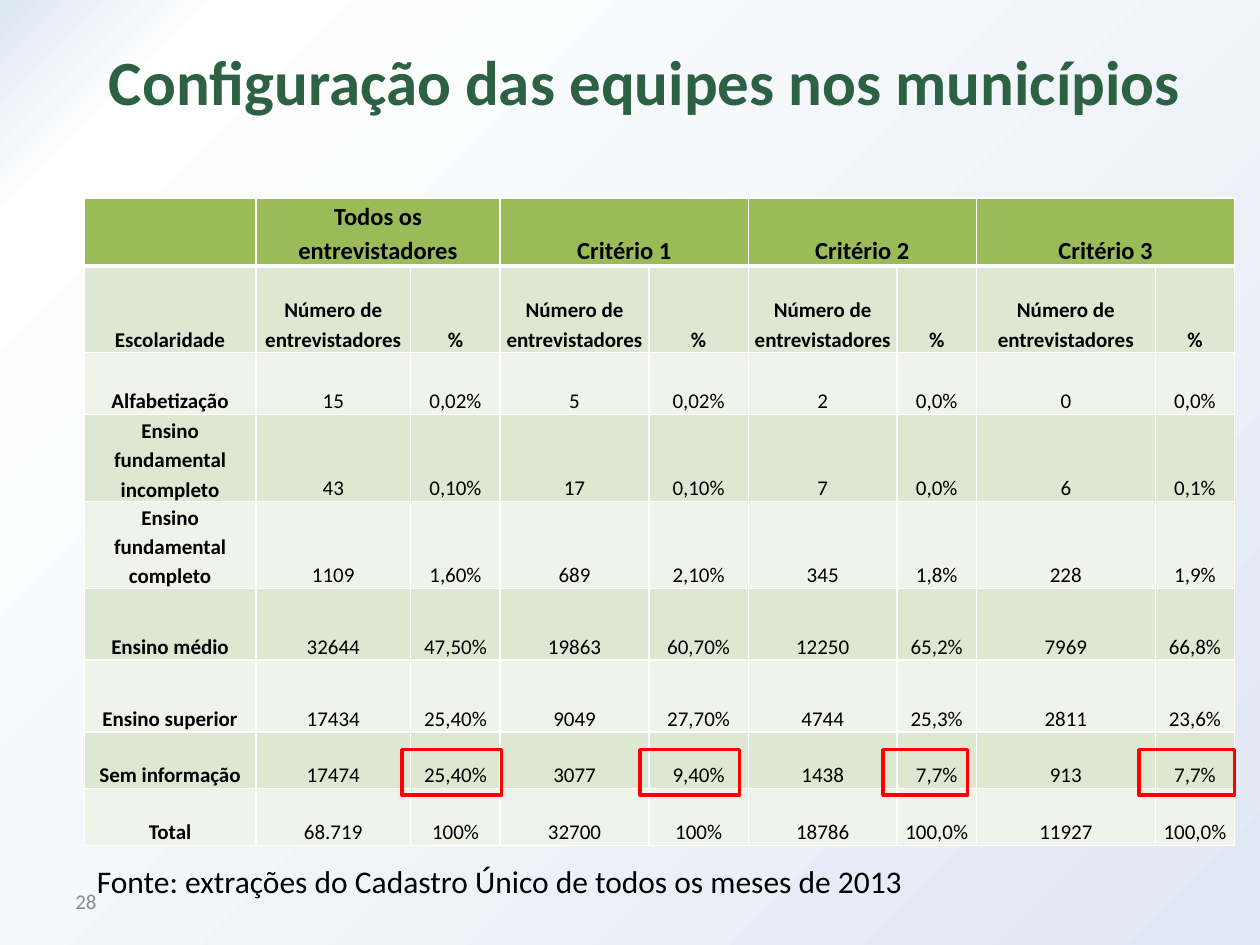
import copy

import pptx
import pptx.dml.color
import pptx.enum.shapes
import pptx.enum.text
import pptx.oxml
import pptx.oxml.ns
import pptx.util
from pptx.dml.color import RGBColor
from pptx.enum.text import MSO_ANCHOR, PP_ALIGN
from pptx.util import Inches

TITLE_GREEN = RGBColor(0x2C, 0x62, 0x43)
HEADER_GREEN = RGBColor(0x9B, 0xBB, 0x59)
BAND_DARK = RGBColor(0xDE, 0xE7, 0xD1)
BAND_LIGHT = RGBColor(0xEF, 0xF3, 0xEA)
PALE_BLUE = RGBColor(0xDC, 0xE6, 0xF2)
LAVENDER = RGBColor(0xE1, 0xE8, 0xF5)
WHITE = RGBColor(0xFF, 0xFF, 0xFF)
BLACK = RGBColor(0, 0, 0)
GRAY = RGBColor(0x8C, 0x8C, 0x8C)
RED = RGBColor(0xFF, 0, 0)

COLUMN_WIDTHS = [1.36, 1.23, 0.71, 1.18, 0.79, 1.18, 0.63, 1.42, 0.63]
ROW_HEIGHTS = [0.54, 0.69, 0.49, 0.69, 0.69, 0.57, 0.57, 0.45, 0.45]
GROUPS = ["Todos os entrevistadores", "Critério 1", "Critério 2", "Critério 3"]
HEADER = [""] + [text for group in GROUPS for text in (group, "")]
SUBHEADER = ["Escolaridade"] + ["Número de entrevistadores", "%"] * len(GROUPS)
SCHOOLING = [
    ["Alfabetização", "15", "0,02%", "5", "0,02%", "2", "0,0%", "0", "0,0%"],
    ["Ensino fundamental incompleto", "43", "0,10%", "17", "0,10%", "7", "0,0%", "6", "0,1%"],
    ["Ensino fundamental completo", "1109", "1,60%", "689", "2,10%", "345", "1,8%", "228", "1,9%"],
    ["Ensino médio", "32644", "47,50%", "19863", "60,70%", "12250", "65,2%", "7969", "66,8%"],
    ["Ensino superior", "17434", "25,40%", "9049", "27,70%", "4744", "25,3%", "2811", "23,6%"],
    ["Sem informação", "17474", "25,40%", "3077", "9,40%", "1438", "7,7%", "913", "7,7%"],
    ["Total", "68.719", "100%", "32700", "100%", "18786", "100,0%", "11927", "100,0%"],
]
HIGHLIGHTS = [(3.19, 0.79), (5.08, 0.79), (7.01, 0.67), (9.04, 0.76)]


class SlideBuilder:
    font_name = "Calibri"

    def __init__(self, slide):
        self.slide = slide

    def background(self, stops, angle):
        fill = self.slide.background.fill
        fill.gradient()
        fill.gradient_angle = angle
        stop_list = self.slide.element.find(".//" + pptx.oxml.ns.qn("a:gsLst"))
        while len(stop_list) < len(stops):
            stop_list.append(copy.deepcopy(stop_list[0]))
        for stop, (position, color) in zip(fill.gradient_stops, stops):
            stop.position = position
            stop.color.rgb = color

    def style(self, paragraph, size, color=BLACK, bold=False, align=None):
        font = paragraph.font
        font.name, font.size, font.bold = self.font_name, pptx.util.Pt(size), bold
        font.color.rgb = color
        paragraph.alignment = align

    def text(self, box, content, size, color=BLACK, bold=False, align=None,
             anchor=MSO_ANCHOR.TOP):
        frame = self.slide.shapes.add_textbox(*map(Inches, box)).text_frame
        frame.word_wrap = True
        frame.vertical_anchor = anchor
        frame.text = content
        self.style(frame.paragraphs[0], size, color, bold, align)

    def borders(self, cell, bottom_width):
        """Draw white borders, 1 pt wide except at the bottom."""
        properties = cell._tc.get_or_add_tcPr()
        for index, side in enumerate("LRTB"):
            width = pptx.util.Pt(bottom_width if side == "B" else 1)
            properties.insert(index, pptx.oxml.parse_xml(
                f'<a:ln{side} {pptx.oxml.ns.nsdecls("a")} w="{width}"><a:solidFill>'
                f'<a:srgbClr val="{WHITE}"/></a:solidFill></a:ln{side}>'))

    def cell(self, cell, content, fill, size, bold, compact, bottom_width):
        """Fill one cell; compact cells have thin margins and single spacing."""
        cell.fill.solid()
        cell.fill.fore_color.rgb = fill
        self.borders(cell, bottom_width)
        cell.vertical_anchor = MSO_ANCHOR.BOTTOM
        cell.margin_left = cell.margin_right = Inches(0.01 if compact else 0.05)
        cell.margin_top = Inches(0.01 if compact else 0)
        cell.margin_bottom = 0
        cell.text = content
        paragraph = cell.text_frame.paragraphs[0]
        self.style(paragraph, size, bold=bold, align=PP_ALIGN.CENTER)
        if not compact:
            paragraph.line_spacing = 1.15

    def table(self, box, rows):
        table = self.slide.shapes.add_table(
            len(rows), len(COLUMN_WIDTHS), *map(Inches, box)).table
        for column, width in zip(table.columns, COLUMN_WIDTHS):
            column.width = Inches(width)
        for row, height in zip(table.rows, ROW_HEIGHTS):
            row.height = Inches(height)
        for r, row in enumerate(rows):
            band = BAND_DARK if r % 2 else BAND_LIGHT
            for c, content in enumerate(row):
                self.cell(table.cell(r, c), content,
                          fill=band if r else HEADER_GREEN,
                          size=12 if r else 14,
                          bold=r < 2 or c == 0,
                          compact=r >= 2 and c >= 5,
                          bottom_width=1 if r else 3)
        for c in range(1, len(COLUMN_WIDTHS), 2):
            table.cell(0, c).merge(table.cell(0, c + 1))

    def highlight(self, box):
        frame = self.slide.shapes.add_shape(
            pptx.enum.shapes.MSO_SHAPE.RECTANGLE, *map(Inches, box))
        frame.shadow.inherit = False
        frame.fill.background()
        frame.line.color.rgb = RED
        frame.line.width = pptx.util.Pt(2)


def main():
    deck = pptx.Presentation()
    deck.slide_width, deck.slide_height = Inches(10), Inches(7.5)
    builder = SlideBuilder(deck.slides.add_slide(deck.slide_layouts[6]))

    builder.background([(0, PALE_BLUE), (0.1, WHITE), (1, LAVENDER)], angle=315)
    builder.text((0, 0.13, 10.35, 1.61), "Configuração das equipes nos municípios \v",
                 36, TITLE_GREEN, True, PP_ALIGN.CENTER, MSO_ANCHOR.MIDDLE)
    builder.text((0.5, 6.95, 2.33, 0.4), "28", 12, GRAY, anchor=MSO_ANCHOR.MIDDLE)
    builder.table((0.67, 1.57, 9.14, 5.14), [HEADER, SUBHEADER] + SCHOOLING)
    for left, width in HIGHLIGHTS:
        builder.highlight((left, 5.95, width, 0.36))
    builder.text((0.67, 6.79, 9.14, 0.4),
                 "Fonte: extrações do Cadastro Único de todos os meses de 2013", 18)

    deck.save("out.pptx")


if __name__ == "__main__":
    main()
